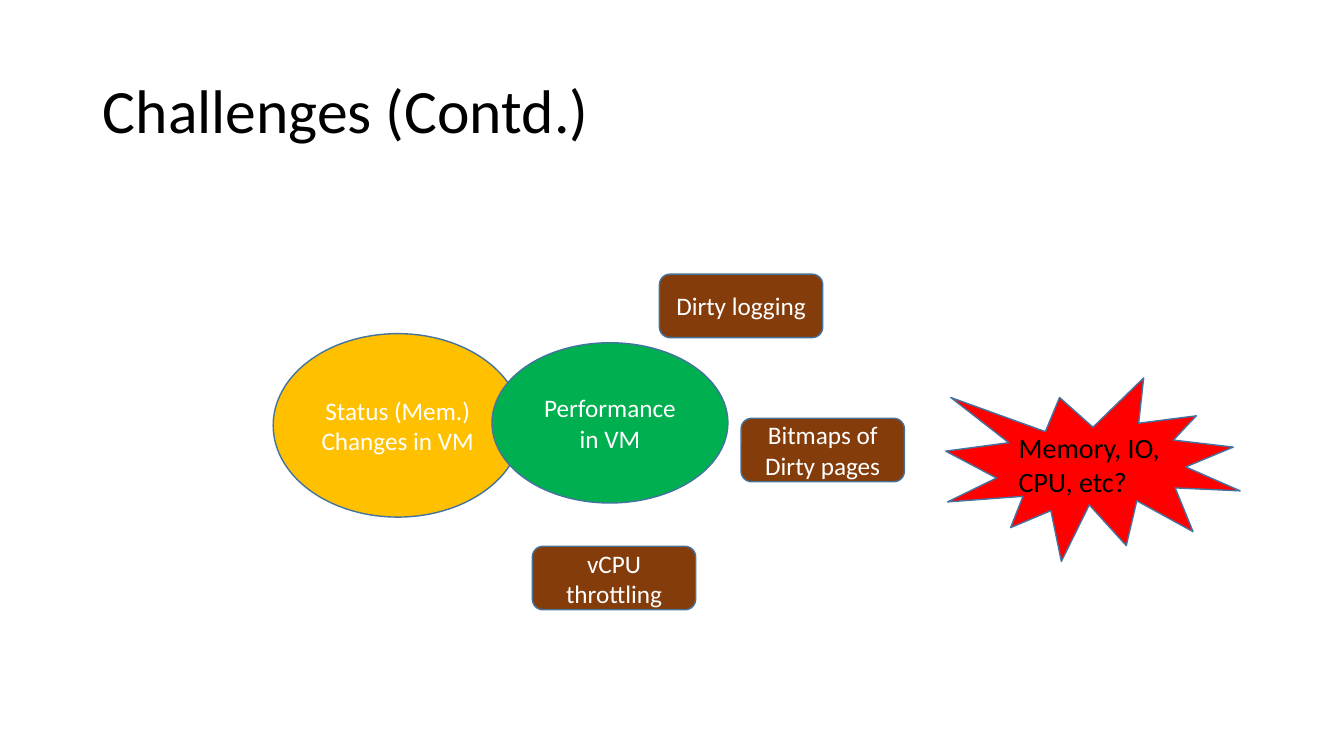
from dataclasses import dataclass

from pptx import Presentation
from pptx.dml.color import RGBColor
from pptx.enum.shapes import MSO_SHAPE as Shape
from pptx.enum.text import MSO_ANCHOR as Anchor, PP_ALIGN as Align
from pptx.util import Inches, Pt


@dataclass(frozen=True)
class Theme:
    font: str = "Calibri"
    title_size: int = 44
    label_size: int = 18
    burst_size: int = 20
    dark: str = "000000"
    light: str = "FFFFFF"
    outline: str = "43739E"
    status: str = "FFC000"
    performance: str = "00B050"
    technique: str = "843C0B"
    burst: str = "FF0000"


THEME = Theme()
TECHNIQUE_SIZE = (1.62, 0.63)


def write_text(frame, text, size, color, align):
    frame.word_wrap = True
    frame.vertical_anchor = Anchor.MIDDLE
    para = frame.paragraphs[0]
    para.alignment = align
    span = para.add_run()
    span.text = text
    span.font.name = THEME.font
    span.font.size = Pt(size)
    span.font.color.rgb = RGBColor.from_string(color)
    return para


def add_title(page, text):
    title = page.shapes.title
    title.left, title.top = Inches(0.92), Inches(0.4)
    title.width, title.height = Inches(11.5), Inches(1.45)
    para = write_text(title.text_frame, text, THEME.title_size, THEME.dark, Align.LEFT)
    para.line_spacing = 0.9


def add_label(page, kind, place, fill, text, size=THEME.label_size,
              color=THEME.light, align=Align.CENTER):
    shape = page.shapes.add_shape(kind, *map(Inches, place))
    shape.shadow.inherit = False
    shape.fill.solid()
    shape.fill.fore_color.rgb = RGBColor.from_string(fill)
    shape.line.color.rgb = RGBColor.from_string(THEME.outline)
    shape.line.width = Pt(1)
    write_text(shape.text_frame, text, size, color, align)


def main():
    deck = Presentation()
    deck.slide_width, deck.slide_height = Inches(13.33), Inches(7.5)
    page = deck.slides.add_slide(deck.slide_layouts.get_by_name("Title Only"))
    add_title(page, "Challenges (Contd.)")

    # Overlapping concerns
    add_label(page, Shape.OVAL, (2.71, 3.31, 2.47, 1.82), THEME.status,
              "Status (Mem.) Changes in VM")
    add_label(page, Shape.OVAL, (4.88, 3.4, 2.34, 1.59), THEME.performance,
              "Performance in VM")

    # Techniques around them
    for left, top, text in (
        (6.54, 2.72, "Dirty logging"),
        (7.35, 4.15, "Bitmaps of Dirty pages"),
        (5.28, 5.42, "vCPU throttling"),
    ):
        add_label(page, Shape.ROUNDED_RECTANGLE, (left, top, *TECHNIQUE_SIZE),
                  THEME.technique, text)

    # Open question
    add_label(page, Shape.EXPLOSION1, (9.38, 3.75, 2.92, 1.82), THEME.burst,
              "Memory, IO, CPU, etc?", THEME.burst_size, THEME.dark, Align.LEFT)

    deck.save("out.pptx")


if __name__ == "__main__":
    main()
